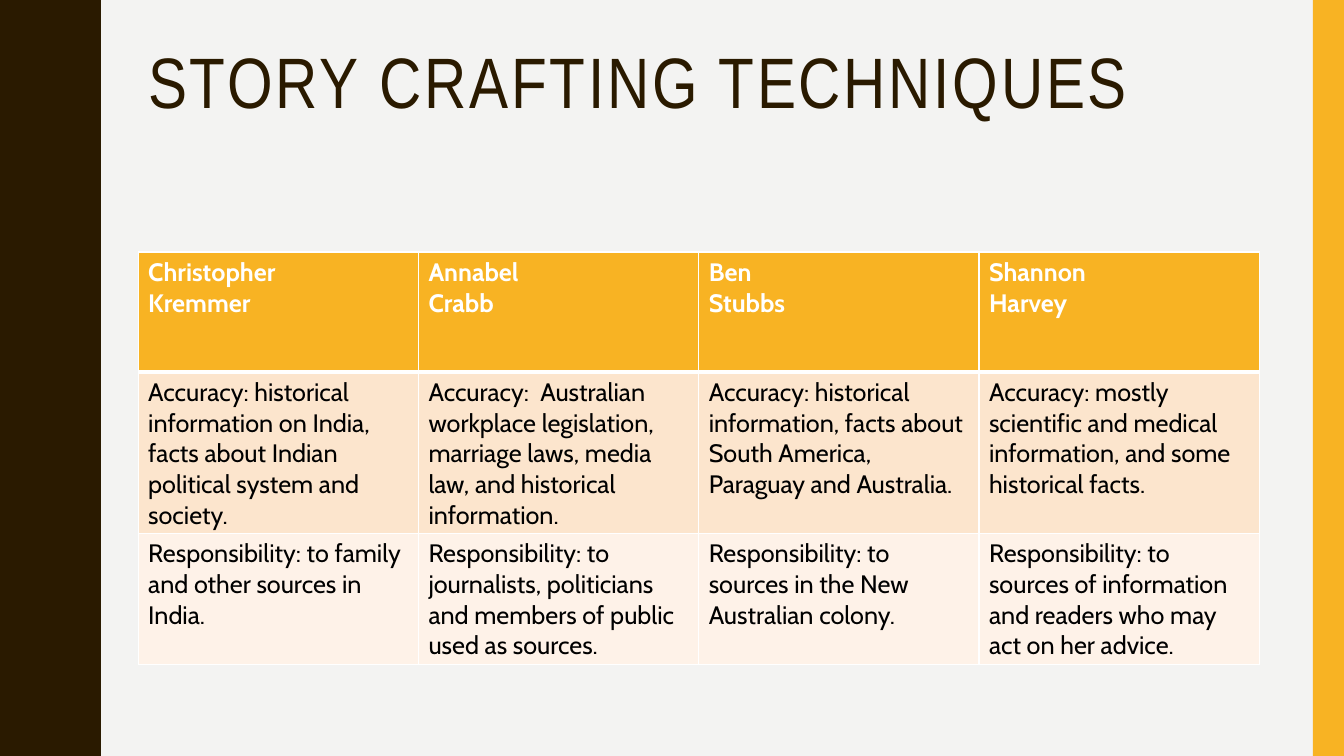
from lxml import etree
from pptx import Presentation, util as u
from pptx.dml.color import RGBColor
from pptx.enum import shapes, text
from pptx.oxml import ns

# Grid, in inches
WIDTH, HEIGHT = 13.33, 7.5
MARGIN, COLUMN, ROW = 1.37, 2.78, 1.19
TABLE_TOP = HEIGHT / 3
WAVE = HEIGHT / 5
WAVE_IN, WAVE_OUT = 0.78, 0.97

BROWN, GOLD, WHITE, BLACK = "2A1A00", "F8B323", "FFFFFF", "000000"
PAPER, PEACH, CREAM = "F3F3F2", "FCE5CD", "FEF2E8"
TITLE_FONT, BODY_FONT = "Arial Narrow", "Cabin"

HEADER = [["Christopher", "Kremmer"], ["Annabel", "Crabb"],
          ["Ben", "Stubbs"], ["Shannon", "Harvey"]]
ACCURACY = [
    "Accuracy: historical information on India, facts about Indian political system and society.",
    "Accuracy:  Australian workplace legislation, marriage laws, media law, and historical information.",
    "Accuracy: historical information, facts about South America, Paraguay and Australia.",
    "Accuracy: mostly scientific and medical information, and some historical facts.",
]
RESPONSIBILITY = [
    "Responsibility: to family and other sources in India.",
    "Responsibility: to journalists, politicians and members of public used as sources.",
    "Responsibility: to sources in the New Australian colony.",
    "Responsibility: to sources of information and readers who may act on her advice.",
]


def color(value):
    return RGBColor.from_string(value)


def paint(shape, fill):
    shape.shadow.inherit = False
    shape.fill.solid()
    shape.fill.fore_color.rgb = color(fill)
    shape.line.fill.background()


def add_span(para, words, size, font, ink, bold=False):
    span = para.add_run()
    span.text = words
    span.font.size = u.Pt(size)
    span.font.name = font
    span.font.bold = bold
    span.font.color.rgb = color(ink)
    return span


def wave_points():
    """Mirror a quarter of the wave into one period, then repeat it downwards."""
    quarter = [(0.78, 0), (0.78, 0.07), (0.79, 0.14), (0.8, 0.2),
               (0.81, 0.25), (0.83, 0.29), (0.85, 0.33), (0.87, 0.38)]
    half = quarter + [(WAVE_IN + WAVE_OUT - x, WAVE / 2 - y) for x, y in reversed(quarter)]
    period = half + [(x, WAVE - y) for x, y in reversed(half[:-1])]
    return [(x, y + WAVE * turn) for turn in range(5) for x, y in period]


def add_wavy_edge(page):
    builder = page.shapes.build_freeform(0, 0, scale=u.Inches(1))
    builder.add_line_segments(wave_points() + [(0, HEIGHT)], close=True)
    paint(builder.convert_to_shape(), BROWN)


def add_side_bar(page):
    left = 13.02
    bar = page.shapes.add_shape(shapes.MSO_SHAPE.RECTANGLE, u.Inches(left), 0,
                                u.Inches(WIDTH - left), u.Inches(HEIGHT))
    paint(bar, GOLD)


def add_title(page, words):
    box = page.shapes.add_textbox(u.Inches(MARGIN), u.Inches(0.42),
                                  u.Inches(4 * COLUMN), u.Inches(1.63))
    frame = box.text_frame
    frame.word_wrap = True
    frame.vertical_anchor = text.MSO_ANCHOR.TOP
    para = frame.paragraphs[0]
    para.line_spacing = 0.9
    span = add_span(para, words, 51, TITLE_FONT, BROWN)
    span.font._element.set("spc", "200")


def add_borders(cell, top, bottom):
    properties = cell._tc.get_or_add_tcPr()
    for side, points in (("L", 1), ("R", 1), ("T", top), ("B", bottom)):
        line = etree.SubElement(properties, ns.qn("a:ln" + side), w=str(u.Pt(points)))
        fill = etree.SubElement(line, ns.qn("a:solidFill"))
        etree.SubElement(fill, ns.qn("a:srgbClr"), val=WHITE)


def fill_cell(cell, lines, fill, ink, bold, top, bottom):
    add_borders(cell, top, bottom)
    cell.fill.solid()
    cell.fill.fore_color.rgb = color(fill)
    frame = cell.text_frame
    for index, words in enumerate(lines):
        para = frame.add_paragraph() if index else frame.paragraphs[0]
        add_span(para, words, 18, BODY_FONT, ink, bold)


def add_story_table(page):
    # Fill, ink, bold, top border, bottom border and texts of each row
    rows = [
        (GOLD, WHITE, True, 1, 3, HEADER),
        (PEACH, BLACK, False, 3, 1, [[words] for words in ACCURACY]),
        (CREAM, BLACK, False, 1, 1, [[words] for words in RESPONSIBILITY]),
    ]
    holder = page.shapes.add_table(len(rows), len(HEADER), u.Inches(MARGIN), u.Inches(TABLE_TOP),
                                   u.Inches(4 * COLUMN), u.Inches(3 * ROW))
    table = holder.table
    table.first_row = table.horz_banding = False
    for row, (fill, ink, bold, top, bottom, texts) in enumerate(rows):
        for column, lines in enumerate(texts):
            fill_cell(table.cell(row, column), lines, fill, ink, bold, top, bottom)


def main():
    deck = Presentation()
    deck.slide_width, deck.slide_height = u.Inches(WIDTH), u.Inches(HEIGHT)
    page = deck.slides.add_slide(deck.slide_layouts[6])
    page.background.fill.solid()
    page.background.fill.fore_color.rgb = color(PAPER)

    # Frame of the slide
    add_wavy_edge(page)
    add_side_bar(page)

    # Content
    add_title(page, "STORY CRAFTING TECHNIQUES")
    add_story_table(page)
    deck.save("out.pptx")


if __name__ == "__main__":
    main()
